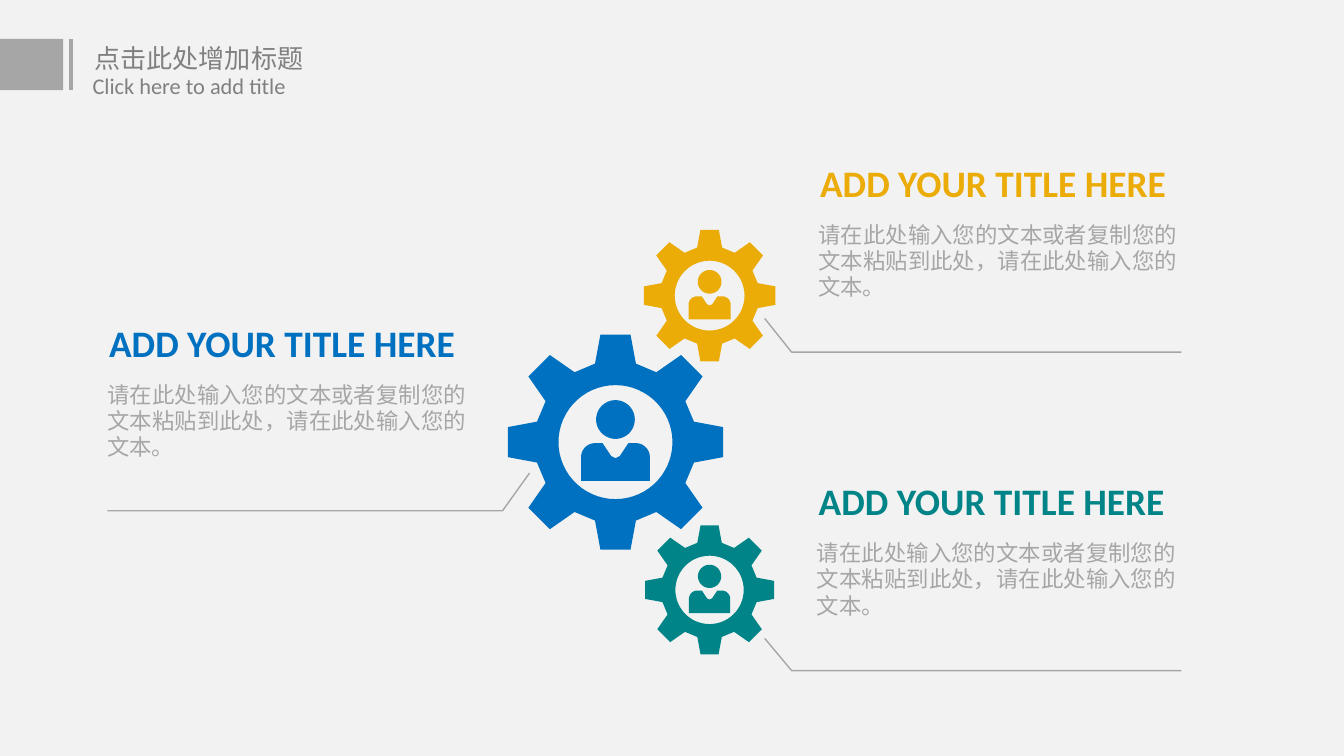
"""Build a slide with three interlocking gears, each with a titled caption."""
import math
from lxml import etree
from pptx import Presentation
from pptx.dml.color import RGBColor
from pptx.enum import shapes, text
from pptx.oxml import ns
from pptx.util import Inches, Pt

rgb = RGBColor.from_string
CJK, LATIN = "Noto Sans CJK SC", "Calibri"
GREY, TITLE_GREY = "A6A6A6", "808080"
BLUE, YELLOW, TEAL = "0070C0", "EBAC07", "008487"

prs = Presentation()
prs.slide_width, prs.slide_height = Inches(10), Inches(5.625)
slide = prs.slides.add_slide(prs.slide_layouts[5])
slide.background.fill.solid()
slide.background.fill.fore_color.rgb = rgb("F2F2F2")


def write(box, place, words, size, font, color, bold=False, spacing=None,
          align=text.PP_ALIGN.LEFT, anchor=text.MSO_ANCHOR.TOP, wrap=True):
    """Place a text shape and format its single paragraph."""
    box.left, box.top, box.width, box.height = (Inches(v) for v in place)
    frame = box.text_frame
    frame.text = words
    frame.word_wrap = wrap
    frame.vertical_anchor = anchor
    frame.auto_size = text.MSO_AUTO_SIZE.SHAPE_TO_FIT_TEXT
    paragraph = frame.paragraphs[0]
    paragraph.alignment = align
    paragraph.line_spacing = spacing
    run = paragraph.runs[0]
    run.font.size, run.font.bold, run.font.name = Pt(size), bold, font
    run.font.color.rgb = rgb(color)
    etree.SubElement(run._r.get_or_add_rPr(), ns.qn("a:ea"), typeface=font)


def trace(contours, center=(0, 0), radius=1, close=True):
    """Draw contours, given in units of radius around center, as one shape."""
    placed = [[(Inches(center[0] + radius * x), Inches(center[1] + radius * y))
               for x, y in contour] for contour in contours]
    builder = slide.shapes.build_freeform(*placed[0][0])
    builder.add_line_segments(placed[0][1:], close=close)
    for contour in placed[1:]:
        builder.move_to(*contour[0])
        builder.add_line_segments(contour[1:], close=close)
    outline = builder.convert_to_shape()
    outline.shadow.inherit = False
    return outline


circle = [(math.cos(math.radians(a)), math.sin(math.radians(a))) for a in range(0, 360, 6)]

gear = []
quarter = [(-.14, -1), (.14, -1), (.19, -.73), (.38, -.65),
           (.61, -.81), (.81, -.61), (.65, -.38), (.73, -.19)]
for turn in range(4):
    gear += quarter
    quarter = [(-y, x) for x, y in quarter]
hole = [(.53 * x, .53 * y) for x, y in reversed(circle)]

head = [(.18 * x, .18 * y - .21) for x, y in circle]
left_shoulder = [(.13 * x - .19, .13 * y + .14) for x, y in circle[30:46]]
collar = [(-.12, .01), (-.04, .13), (0, .15), (.04, .13), (.12, .01)]
right_shoulder = [(-x, y) for x, y in reversed(left_shoulder)]
body = left_shoulder + collar + right_shoulder + [(.32, .36), (-.32, .36)]

for center, radius, color in [((5.28, 4.39), .48, TEAL),
                              ((5.28, 2.2), .49, YELLOW),
                              ((4.58, 3.29), .8, BLUE)]:
    for contours in ([gear, hole], [head, body]):
        part = trace(contours, center, radius)
        part.fill.solid()
        part.fill.fore_color.rgb = rgb(color)
        part.line.fill.background()

for leader in ([(5.69, 2.37), (5.89, 2.62), (8.79, 2.62)],
               [(5.69, 4.75), (5.89, 4.99), (8.79, 4.99)],
               [(3.94, 3.52), (3.74, 3.8), (.8, 3.8)]):
    rule = trace([leader], close=False)
    rule.fill.background()
    rule.line.color.rgb = rgb(GREY)
    rule.line.width = Pt(.75)

for left, top, color in [(.7, 2.33, BLUE), (5.99, 1.14, YELLOW), (5.98, 3.51, TEAL)]:
    write(slide.shapes.add_textbox(0, 0, 0, 0), (left, top + .46, 2.87, .69),
          "请在此处输入您的文本或者复制您的文本粘贴到此处，请在此处输入您的文本。",
          12, CJK, GREY, spacing=Pt(14), align=text.PP_ALIGN.JUSTIFY)
    write(slide.shapes.add_textbox(0, 0, 0, 0), (left, top, 2.8, .44),
          "ADD YOUR TITLE HERE", 20, LATIN, color, bold=True,
          align=text.PP_ALIGN.CENTER, wrap=False)

header_block = slide.shapes.add_shape(shapes.MSO_SHAPE.RECTANGLE, 0, Inches(.29),
                                      Inches(.47), Inches(.38))
header_block.shadow.inherit = False
header_block.fill.solid()
header_block.fill.fore_color.rgb = rgb(GREY)
header_block.line.fill.background()

header_bar = slide.shapes.add_connector(shapes.MSO_CONNECTOR.STRAIGHT, Inches(.53),
                                        Inches(.29), Inches(.53), Inches(.67))
header_bar.line.color.rgb = rgb(GREY)
header_bar.line.width = Pt(2.25)
etree.SubElement(header_bar._element.spPr, ns.qn("a:effectLst"))

write(slide.shapes.title, (.6, .23, 1.88, .36), "点击此处增加标题", 14, CJK,
      TITLE_GREY, spacing=1.2, anchor=text.MSO_ANCHOR.MIDDLE)
write(slide.shapes.add_textbox(0, 0, 0, 0), (.59, .45, 1.88, .33),
      "Click here to add title", 12, LATIN, TITLE_GREY, spacing=1.2,
      anchor=text.MSO_ANCHOR.MIDDLE)

prs.save("out.pptx")
